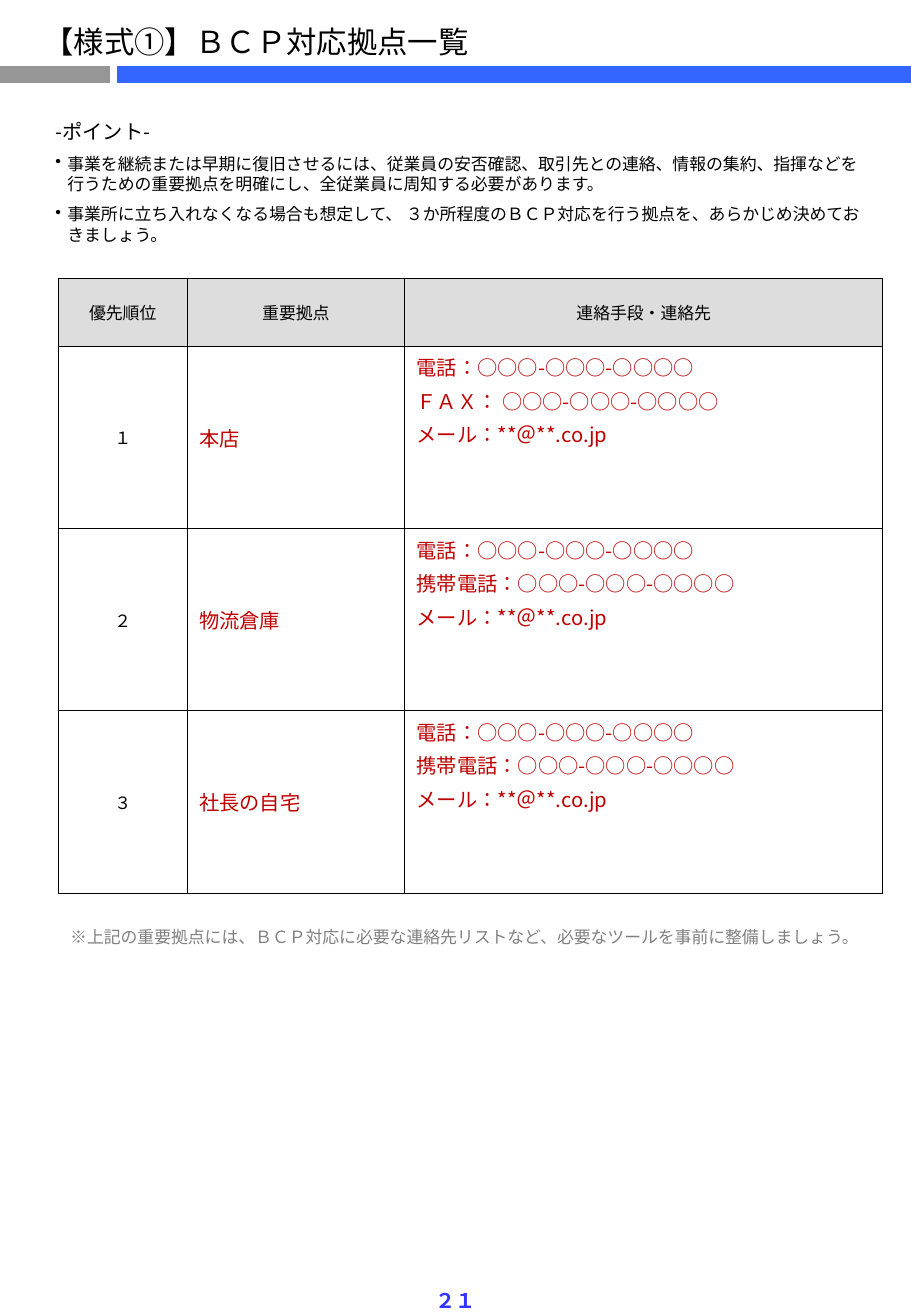
from dataclasses import dataclass

from lxml.etree import SubElement
from pptx import Presentation
from pptx.dml.color import RGBColor
from pptx.enum.lang import MSO_LANGUAGE_ID as Lang
from pptx.enum.shapes import MSO_CONNECTOR as Connector
from pptx.enum.text import MSO_ANCHOR as Anchor, MSO_AUTO_SIZE as AutoSize, PP_ALIGN as Align
from pptx.oxml import parse_xml
from pptx.oxml.ns import nsdecls, qn
from pptx.util import Cm, Pt


@dataclass(frozen=True)
class Theme:
    font: str = "Noto Sans CJK JP"
    black: str = "000000"
    grey: str = "969696"
    blue: str = "3366FF"
    page_blue: str = "3333FF"
    note_grey: str = "808080"
    header_fill: str = "DDDDDD"
    entry_red: str = "C00000"
    title: int = 18
    large: int = 12
    body: int = 10
    rule: int = 10
    border: float = 0.5


THEME = Theme()

POINTS = [
    "事業を継続または早期に復旧させるには、従業員の安否確認、取引先との連絡、情報の集約、指揮などを"
    "行うための重要拠点を明確にし、全従業員に周知する必要があります。",
    "事業所に立ち入れなくなる場合も想定して、 ３か所程度のＢＣＰ対応を行う拠点を、"
    "あらかじめ決めておきましょう。",
]
HEADERS = ["優先順位", "重要拠点", "連絡手段・連絡先"]
NUMBER = "○○○-○○○-○○○○"
PHONE = f"電話：{NUMBER}"
MOBILE = f"携帯電話：{NUMBER}"
MAIL = "メール：**＠**.co.jp"
BASES = [
    ("１", "本店", [PHONE, f"ＦＡＸ： {NUMBER}", MAIL]),
    ("２", "物流倉庫", [PHONE, MOBILE, MAIL]),
    ("３", "社長の自宅", [PHONE, MOBILE, MAIL]),
]
COLUMN_WIDTHS = [2.69, 4.55, 10.0]
HEADER_HEIGHT, BASE_HEIGHT = 1.42, 3.81


def add_run(paragraph, text, size, color, bold=False):
    run = paragraph.add_run()
    run.text = text
    font = run.font
    font.name, font.size, font.bold = THEME.font, Pt(size), bold
    font.color.rgb = RGBColor.from_string(color)
    font.language_id = Lang.JAPANESE
    east_asian = SubElement(font._element, qn("a:ea"))
    east_asian.set("typeface", THEME.font)


def add_text_frame(slide, left, top, width, height, wrap=True):
    frame = slide.shapes.add_textbox(Cm(left), Cm(top), Cm(width), Cm(height)).text_frame
    frame.word_wrap = wrap
    frame.auto_size = AutoSize.SHAPE_TO_FIT_TEXT
    return frame


def add_rule(slide, start, end, color):
    height = Cm(1.55)
    rule = slide.shapes.add_connector(Connector.STRAIGHT, Cm(start), height, Cm(end), height)
    rule.line.color.rgb = RGBColor.from_string(color)
    rule.line.width = Pt(THEME.rule)
    SubElement(rule._element.spPr, qn("a:effectLst"))


def hang(paragraph, bullet=None):
    paragraph.space_after = Pt(6)
    properties = paragraph._p.get_or_add_pPr()
    properties.set("marL", str(Cm(0.25)))
    properties.set("indent", str(-Cm(0.25)))
    if bullet:
        SubElement(properties, qn("a:buChar")).set("char", bullet)


def add_points(slide):
    frame = add_text_frame(slide, 0.91, 2.36, 17.5, 2.9)
    heading = frame.paragraphs[0]
    hang(heading)
    add_run(heading, "-ポイント-", THEME.large, THEME.black)
    for text in POINTS:
        point = frame.add_paragraph()
        hang(point, "•")
        add_run(point, text, THEME.body, THEME.black)


def add_borders(cell):
    properties = cell._tc.get_or_add_tcPr()
    for position, side in enumerate(("lnL", "lnR", "lnT", "lnB")):
        properties.insert(position, parse_xml(
            f'<a:{side} {nsdecls("a")} w="{Pt(THEME.border)}"><a:solidFill>'
            f'<a:srgbClr val="{THEME.black}"/></a:solidFill></a:{side}>'))


def fill_cell(cell, lines, size, color, align=Align.LEFT, anchor=Anchor.MIDDLE, fill=None):
    cell.vertical_anchor = anchor
    if fill:
        cell.fill.solid()
        cell.fill.fore_color.rgb = RGBColor.from_string(fill)
    else:
        cell.fill.background()
    add_borders(cell)
    frame = cell.text_frame
    for index, line in enumerate(lines):
        paragraph = frame.add_paragraph() if index else frame.paragraphs[0]
        paragraph.alignment = align
        paragraph.space_before = Pt(size * 0.2)
        add_run(paragraph, line, size, color)


def add_base_table(slide):
    heights = [HEADER_HEIGHT] + [BASE_HEIGHT] * len(BASES)
    table = slide.shapes.add_table(
        len(heights), len(HEADERS), Cm(1.22), Cm(5.82),
        Cm(sum(COLUMN_WIDTHS)), Cm(sum(heights))).table
    table.first_row = table.horz_banding = False
    for column, width in zip(table.columns, COLUMN_WIDTHS):
        column.width = Cm(width)
    for row, height in zip(table.rows, heights):
        row.height = Cm(height)
    for column, header in enumerate(HEADERS):
        fill_cell(table.cell(0, column), [header], THEME.body, THEME.black,
                  Align.CENTER, fill=THEME.header_fill)
    for row, (priority, base, contacts) in enumerate(BASES, 1):
        fill_cell(table.cell(row, 0), [priority], THEME.body, THEME.black, Align.CENTER)
        fill_cell(table.cell(row, 1), [base], THEME.large, THEME.entry_red)
        fill_cell(table.cell(row, 2), contacts, THEME.large, THEME.entry_red, anchor=Anchor.TOP)


def main():
    deck = Presentation()
    deck.slide_width, deck.slide_height = Cm(19.05), Cm(27.51)
    slide = deck.slides.add_slide(deck.slide_layouts[6])

    add_rule(slide, 0, 2.29, THEME.grey)
    add_rule(slide, 2.44, 19.05, THEME.blue)

    title = add_text_frame(slide, 0.66, 0.36, 9.5, 1.02, wrap=False).paragraphs[0]
    add_run(title, "【様式①】ＢＣＰ対応拠点一覧", THEME.title, THEME.black)

    add_points(slide)
    add_base_table(slide)

    note = add_text_frame(slide, 1.22, 19.25, 17.2, 0.69).paragraphs[0]
    add_run(note, "※上記の重要拠点には、ＢＣＰ対応に必要な連絡先リストなど、必要なツールを事前に整備しましょう。",
            THEME.body, THEME.note_grey)

    page = add_text_frame(slide, 8.84, 26.8, 1.37, 0.79, wrap=False).paragraphs[0]
    page.alignment = Align.CENTER
    add_run(page, "２１", THEME.large, THEME.page_blue, bold=True)

    deck.save("out.pptx")


if __name__ == "__main__":
    main()
